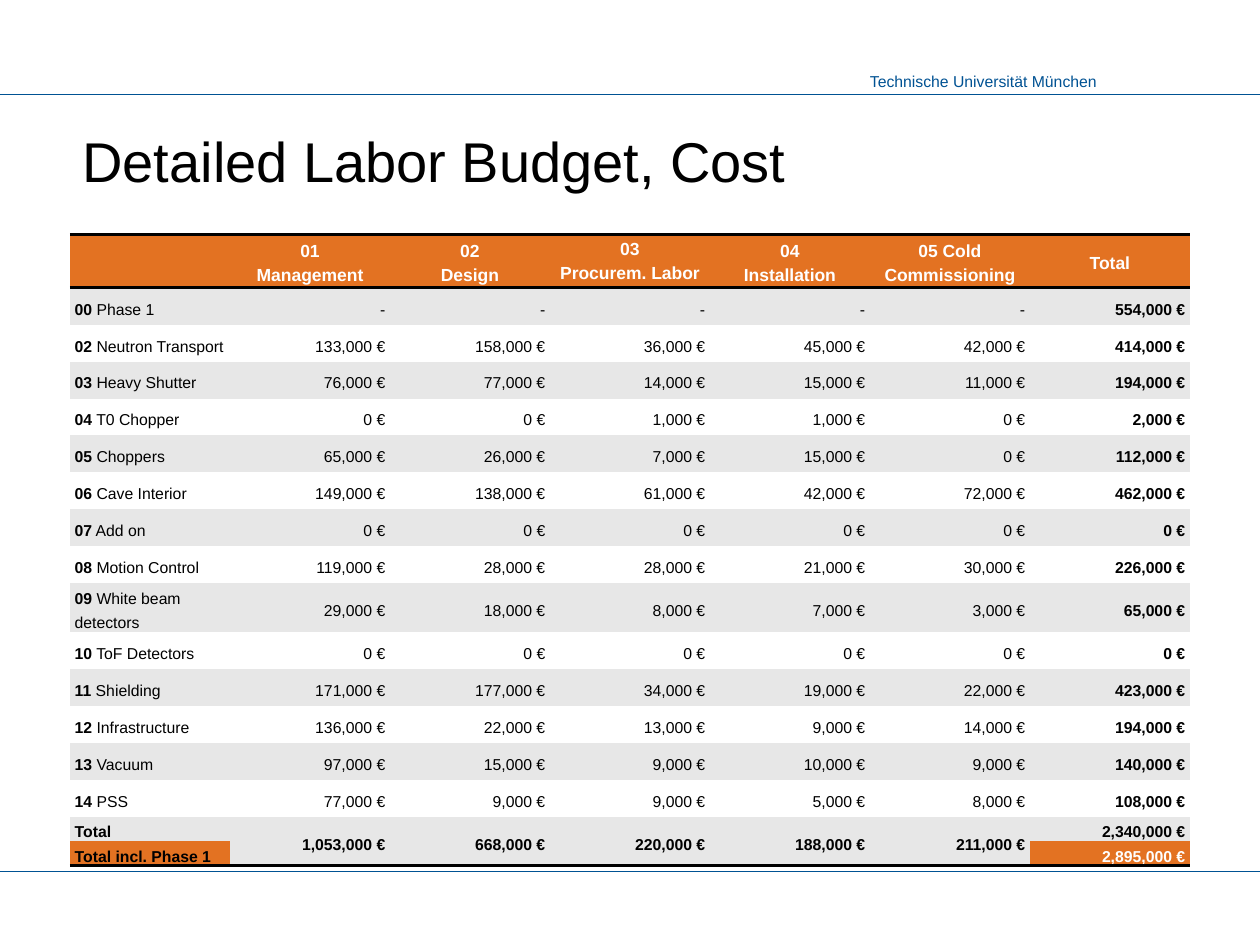
from dataclasses import dataclass

from lxml import etree
from pptx import Presentation
from pptx.dml.color import RGBColor
from pptx.enum.shapes import MSO_CONNECTOR
from pptx.enum.text import MSO_ANCHOR, PP_ALIGN
from pptx.oxml import parse_xml
from pptx.oxml.ns import nsdecls, qn
from pptx.util import Pt

LEFT, CENTER, RIGHT = PP_ALIGN.LEFT, PP_ALIGN.CENTER, PP_ALIGN.RIGHT
TOP, MIDDLE, BOTTOM = MSO_ANCHOR.TOP, MSO_ANCHOR.MIDDLE, MSO_ANCHOR.BOTTOM
STRAIGHT = MSO_CONNECTOR.STRAIGHT
PLAIN_TABLE = "{2D5ABB26-0587-4C30-8999-92F81FD0307C}"

SLIDE_WIDTH, SLIDE_HEIGHT = 720, 540
COLUMN_WIDTH = 91.44
HEADER_HEIGHT, ROW_HEIGHT, LINE_HEIGHT = 30.5, 21.1, 14
CELL_MARGIN = 2.7

HEADINGS = [
    [], ["01", "Management"], ["02", "Design"], ["03", "Procurem. Labor"],
    ["04", "Installation"], ["05 Cold", "Commissioning"], ["Total"],
]
# Work package code and name, then thousands of euros per phase and in total
WORK_PACKAGES = [
    ("00", "Phase 1", None, None, None, None, None, 554),
    ("02", "Neutron Transport", 133, 158, 36, 45, 42, 414),
    ("03", "Heavy Shutter", 76, 77, 14, 15, 11, 194),
    ("04", "T0 Chopper", 0, 0, 1, 1, 0, 2),
    ("05", "Choppers", 65, 26, 7, 15, 0, 112),
    ("06", "Cave Interior", 149, 138, 61, 42, 72, 462),
    ("07", "Add on", 0, 0, 0, 0, 0, 0),
    ("08", "Motion Control", 119, 28, 28, 21, 30, 226),
    ("09", "White beam detectors", 29, 18, 8, 7, 3, 65),
    ("10", "ToF Detectors", 0, 0, 0, 0, 0, 0),
    ("11", "Shielding", 171, 177, 34, 19, 22, 423),
    ("12", "Infrastructure", 136, 22, 13, 9, 14, 194),
    ("13", "Vacuum", 97, 15, 9, 10, 9, 140),
    ("14", "PSS", 77, 9, 9, 5, 8, 108),
]
PHASE_TOTALS = [1053, 668, 220, 188, 211]
TOTAL, TOTAL_WITH_PHASE_1 = 2340, 2895


@dataclass(frozen=True)
class Theme:
    font: str = "Arial"
    blue: str = "005293"
    orange: str = "E37222"
    grey: str = "E7E7E7"
    white: str = "FFFFFF"
    black: str = "000000"
    title_size: int = 32
    heading_size: int = 10
    body_size: int = 9
    rule_width: float = 0.75
    border_width: int = 2


def euros(thousands):
    return "-" if thousands is None else f"{thousands * 1000:,} €"


class SlideBuilder:
    def __init__(self, slide, theme):
        self.slide = slide
        self.theme = theme

    def run(self, paragraph, text, size, color, bold=False):
        run = paragraph.add_run()
        run.text = text
        values = {"name": self.theme.font, "size": Pt(size), "bold": bold}
        for name, value in values.items():
            setattr(run.font, name, value)
        run.font.color.rgb = RGBColor.from_string(color)

    def text(self, text, box, size, color, anchor=TOP, wrap=True):
        shape = self.slide.shapes.add_textbox(*map(Pt, box))
        frame = shape.text_frame
        frame.word_wrap = wrap
        frame.vertical_anchor = anchor
        self.run(frame.paragraphs[0], text, size, color)

    def rule(self, y):
        """Draw a thin line across the whole slide."""
        line = self.slide.shapes.add_connector(STRAIGHT, 0, Pt(y), Pt(SLIDE_WIDTH), Pt(y))
        line.line.color.rgb = RGBColor.from_string(self.theme.blue)
        line.line.width = Pt(self.theme.rule_width)
        etree.SubElement(line._element.spPr, qn("a:effectLst"))

    def table(self, left, top, row_heights, column_count):
        frame = self.slide.shapes.add_table(
            len(row_heights), column_count, Pt(left), Pt(top),
            Pt(COLUMN_WIDTH * column_count), Pt(sum(row_heights)))
        table = frame.table
        table.first_row = table.horz_banding = False
        table._tbl.tblPr.find(qn("a:tableStyleId")).text = PLAIN_TABLE
        for column in table.columns:
            column.width = Pt(COLUMN_WIDTH)
        for row, height in zip(table.rows, row_heights):
            row.height = Pt(height)
        return table

    def cell(self, cell, lines, fill, align=RIGHT, anchor=MIDDLE, size=None, color=None):
        """Fill a cell; each line is a list of (text, bold) pairs."""
        values = {"margin_left": Pt(CELL_MARGIN), "margin_right": Pt(CELL_MARGIN),
                  "margin_top": 0, "margin_bottom": 0, "vertical_anchor": anchor}
        for name, value in values.items():
            setattr(cell, name, value)
        cell.fill.solid()
        cell.fill.fore_color.rgb = RGBColor.from_string(fill)
        frame = cell.text_frame
        for index, line in enumerate(lines):
            paragraph = frame.add_paragraph() if index else frame.paragraphs[0]
            paragraph.alignment = align
            paragraph.line_spacing = Pt(LINE_HEIGHT)
            for text, bold in line:
                self.run(paragraph, text, size or self.theme.body_size,
                         color or self.theme.black, bold)

    def border(self, cell, *sides):
        """Add borders to a cell, sides given in the order T, B."""
        properties = cell._tc.get_or_add_tcPr()
        for index, side in enumerate(sides):
            properties.insert(index, parse_xml(
                f'<a:ln{side} {nsdecls("a")} w="{Pt(self.theme.border_width)}"><a:solidFill>'
                f'<a:srgbClr val="{self.theme.black}"/></a:solidFill></a:ln{side}>'))


def add_budget(builder):
    theme = builder.theme
    package_heights = [2 * LINE_HEIGHT if package[0] == "09" else ROW_HEIGHT
                       for package in WORK_PACKAGES]
    heights = [HEADER_HEIGHT, *package_heights, LINE_HEIGHT, LINE_HEIGHT]
    table = builder.table(40, 134, heights, len(HEADINGS))
    last_column = len(HEADINGS) - 1

    for column, heading in enumerate(HEADINGS):
        cell = table.cell(0, column)
        builder.cell(cell, [[(line, True)] for line in heading], theme.orange, CENTER,
                     TOP if column == 3 else MIDDLE, theme.heading_size, theme.white)
        builder.border(cell, "T", "B")

    for row, (code, name, *amounts) in enumerate(WORK_PACKAGES, 1):
        fill = theme.grey if row % 2 else theme.white
        builder.cell(table.cell(row, 0), [[(code, True), (f" {name}", False)]], fill, LEFT)
        for column, amount in enumerate(amounts, 1):
            builder.cell(table.cell(row, column),
                         [[(euros(amount), column == last_column)]], fill)

    total_row = len(WORK_PACKAGES) + 1
    last_row = total_row + 1
    for column, amount in enumerate(PHASE_TOTALS, 1):
        cell = table.cell(total_row, column)
        cell.merge(table.cell(last_row, column))
        builder.cell(cell, [[(euros(amount), True)]], theme.grey)
        builder.border(cell, "B")
    summary = [
        (total_row, "Total", TOTAL, theme.grey, theme.black),
        (last_row, "Total incl. Phase 1", TOTAL_WITH_PHASE_1, theme.orange, theme.white),
    ]
    for row, label, amount, fill, color in summary:
        builder.cell(table.cell(row, 0), [[(label, True)]], fill, LEFT)
        builder.cell(table.cell(row, last_column), [[(euros(amount), True)]], fill, color=color)
    for column in range(len(HEADINGS)):
        builder.border(table.cell(last_row, column), "B")


def main():
    presentation = Presentation()
    presentation.slide_width, presentation.slide_height = Pt(SLIDE_WIDTH), Pt(SLIDE_HEIGHT)
    theme = Theme()
    builder = SlideBuilder(presentation.slides.add_slide(presentation.slide_layouts[6]), theme)
    builder.text("Technische Universität München", (490, 37.5, 145, 18),
                 theme.body_size, theme.blue, wrap=False)
    for y in (498, 54):
        builder.rule(y)
    builder.text("Detailed Labor Budget, Cost", (40, 67, 640, 47.5),
                 theme.title_size, theme.black, BOTTOM)
    add_budget(builder)
    presentation.save("out.pptx")


if __name__ == "__main__":
    main()
